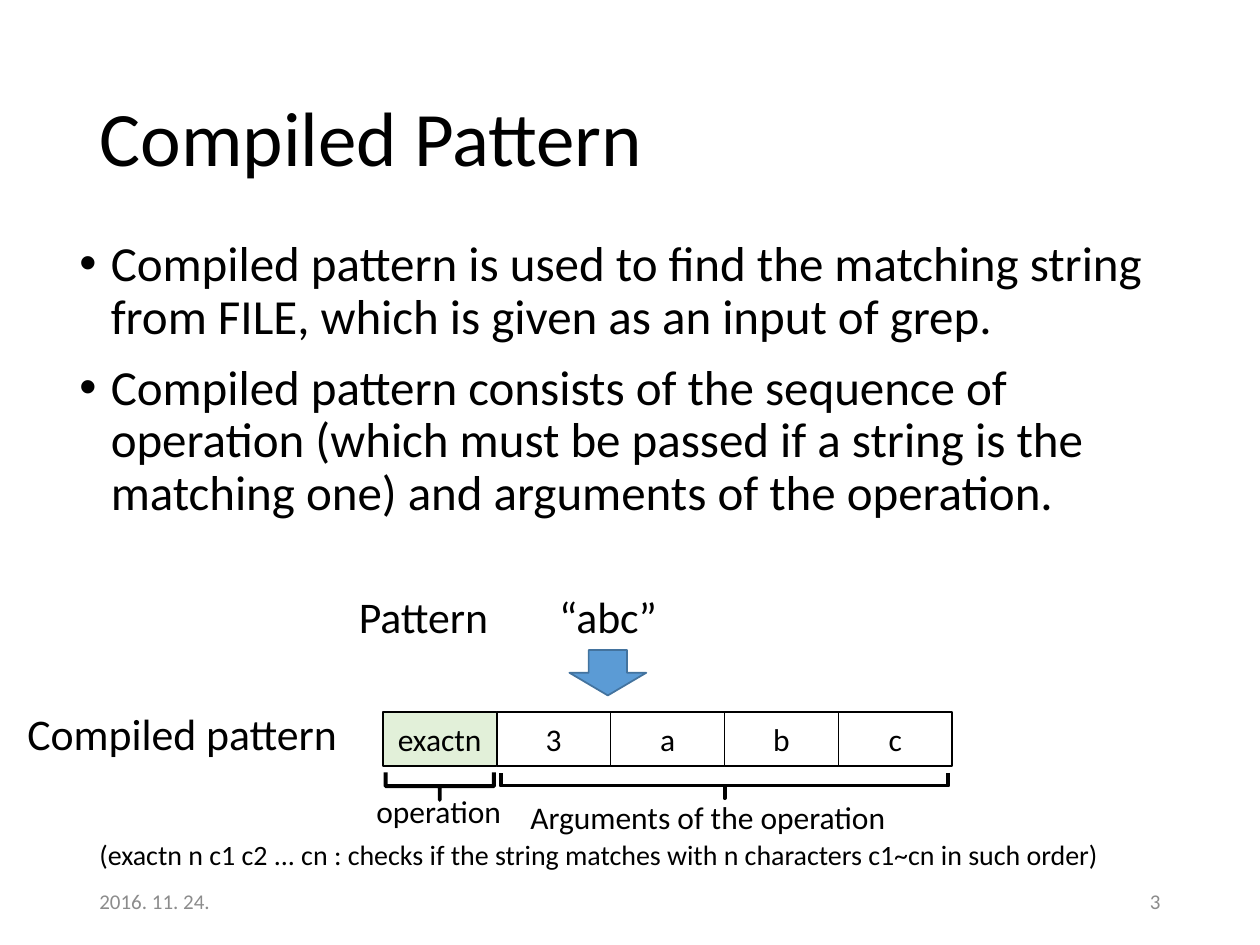
from lxml import etree
from pptx import Presentation
from pptx import util as u
from pptx.dml import color
from pptx.enum import shapes, text
from pptx.oxml import ns

Pt = u.Pt
BLACK = color.RGBColor(0, 0, 0)
GRAY = color.RGBColor(0x8C, 0x8C, 0x8C)
GREEN = color.RGBColor(0xE2, 0xF0, 0xD9)
BLUE = color.RGBColor(0x5B, 0x9B, 0xD5)
DARK_BLUE = color.RGBColor(0x43, 0x73, 0x9E)
LEFT, CENTER, RIGHT = text.PP_ALIGN.LEFT, text.PP_ALIGN.CENTER, text.PP_ALIGN.RIGHT
TOP, MIDDLE = text.MSO_ANCHOR.TOP, text.MSO_ANCHOR.MIDDLE

TITLE = "Compiled Pattern"
BULLETS = [
    "Compiled pattern is used to find the matching string from FILE, "
    "which is given as an input of grep.",
    "Compiled pattern consists of the sequence of operation (which must be passed "
    "if a string is the matching one) and arguments of the operation.",
]
PATTERN = "Pattern\t“abc”"
PATTERN_TAB = 114.5
LABELS = [
    ("Compiled pattern", (8.6, 400.3, 212, 37.4), 25),
    ("operation", (208, 449.3, 88, 28.8), 18),
    ("Arguments of the operation", (296, 452.2, 230, 28.8), 18),
    ("(exactn n c1 c2 ... cn : checks if the string matches with n characters "
     "c1~cn in such order)", (49.7, 475.2, 630, 26.6), 16),
]
FOOTERS = [
    ("2016. 11. 24.", (49.7, 500.4, 162, 28.8), LEFT),
    ("3", (508.3, 500.4, 162, 28.8), RIGHT),
]
CELLS = ["exactn", "3", "a", "b", "c"]
CELL_LEFT, CELL_TOP, CELL_WIDTH, CELL_HEIGHT = 218.7, 406.8, 65.1, 31
BRACES = [(243.4, 418.3, 15.8, 61.9), (406.8, 321.1, 14.4, 255.6)]
ARROW = (325.4, 371.5, 43.9, 25.9)


def points(box):
    return [Pt(value) for value in box]


def write(shape, lines, size, align=LEFT, anchor=TOP, rgb=BLACK, **spacing):
    frame = shape.text_frame
    frame_format = {"word_wrap": True, "auto_size": text.MSO_AUTO_SIZE.NONE,
                    "vertical_anchor": anchor}
    for name, value in frame_format.items():
        setattr(frame, name, value)
    frame.text = "\n".join(lines)
    for paragraph in frame.paragraphs:
        for name, value in {"alignment": align, **spacing}.items():
            setattr(paragraph, name, value)
        font = paragraph.runs[0].font
        for name, value in {"name": "Calibri", "size": Pt(size)}.items():
            setattr(font, name, value)
        font.color.rgb = rgb
    return frame


def add_label(slide, box, lines, size, **settings):
    return write(slide.shapes.add_textbox(*points(box)), lines, size, **settings)


def add_preset(slide, kind, box, fill, line, width):
    shape = slide.shapes.add_shape(kind, *points(box))
    shape.shadow.inherit = False
    if fill is None:
        shape.fill.background()
    else:
        shape.fill.solid()
        shape.fill.fore_color.rgb = fill
    shape.line.color.rgb = line
    shape.line.width = Pt(width)
    return shape


def add_bullet(paragraph):
    properties = paragraph._p.get_or_add_pPr()
    properties.set("marL", str(Pt(18)))
    properties.set("indent", str(Pt(-18)))
    etree.SubElement(properties, ns.qn("a:buFont")).set("typeface", "Arial")
    etree.SubElement(properties, ns.qn("a:buChar")).set("char", "•")


def add_tab_stop(paragraph, position):
    tabs = etree.SubElement(paragraph._p.get_or_add_pPr(), ns.qn("a:tabLst"))
    tab = etree.SubElement(tabs, ns.qn("a:tab"))
    tab.set("pos", str(Pt(position)))
    tab.set("algn", "l")


def main():
    presentation = Presentation()
    presentation.slide_width, presentation.slide_height = Pt(720), Pt(540)
    slide = presentation.slides.add_slide(presentation.slide_layouts[5])

    title = slide.shapes.title
    title.left, title.top, title.width, title.height = points((49.7, 28.8, 620.6, 104.4))
    write(title, [TITLE], 44, anchor=MIDDLE, line_spacing=0.9)

    body = add_label(slide, (38.2, 133.2, 632.2, 353.5), BULLETS, 28,
                     line_spacing=0.9, space_before=Pt(10))
    for paragraph in body.paragraphs:
        add_bullet(paragraph)

    pattern = add_label(slide, (198, 333.4, 200, 37.4), [PATTERN], 25)
    add_tab_stop(pattern.paragraphs[0], PATTERN_TAB)

    for index, content in enumerate(CELLS):
        box = (CELL_LEFT + index * CELL_WIDTH, CELL_TOP, CELL_WIDTH, CELL_HEIGHT)
        cell = add_preset(slide, shapes.MSO_SHAPE.RECTANGLE, box,
                          GREEN if index == 0 else None, BLACK, 1)
        write(cell, [content], 18, align=CENTER, anchor=MIDDLE)

    for content, box, size in LABELS:
        add_label(slide, box, [content], size)

    for box in BRACES:
        brace = add_preset(slide, shapes.MSO_SHAPE.RIGHT_BRACE, box, None, BLACK, 2.25)
        brace.rotation = 90
        brace.adjustments[0], brace.adjustments[1] = 0, 0.5

    for content, box, align in FOOTERS:
        add_label(slide, box, [content], 12, align=align, anchor=MIDDLE, rgb=GRAY)

    add_preset(slide, shapes.MSO_SHAPE.DOWN_ARROW, ARROW, BLUE, DARK_BLUE, 1)
    presentation.save("out.pptx")


if __name__ == "__main__":
    main()
